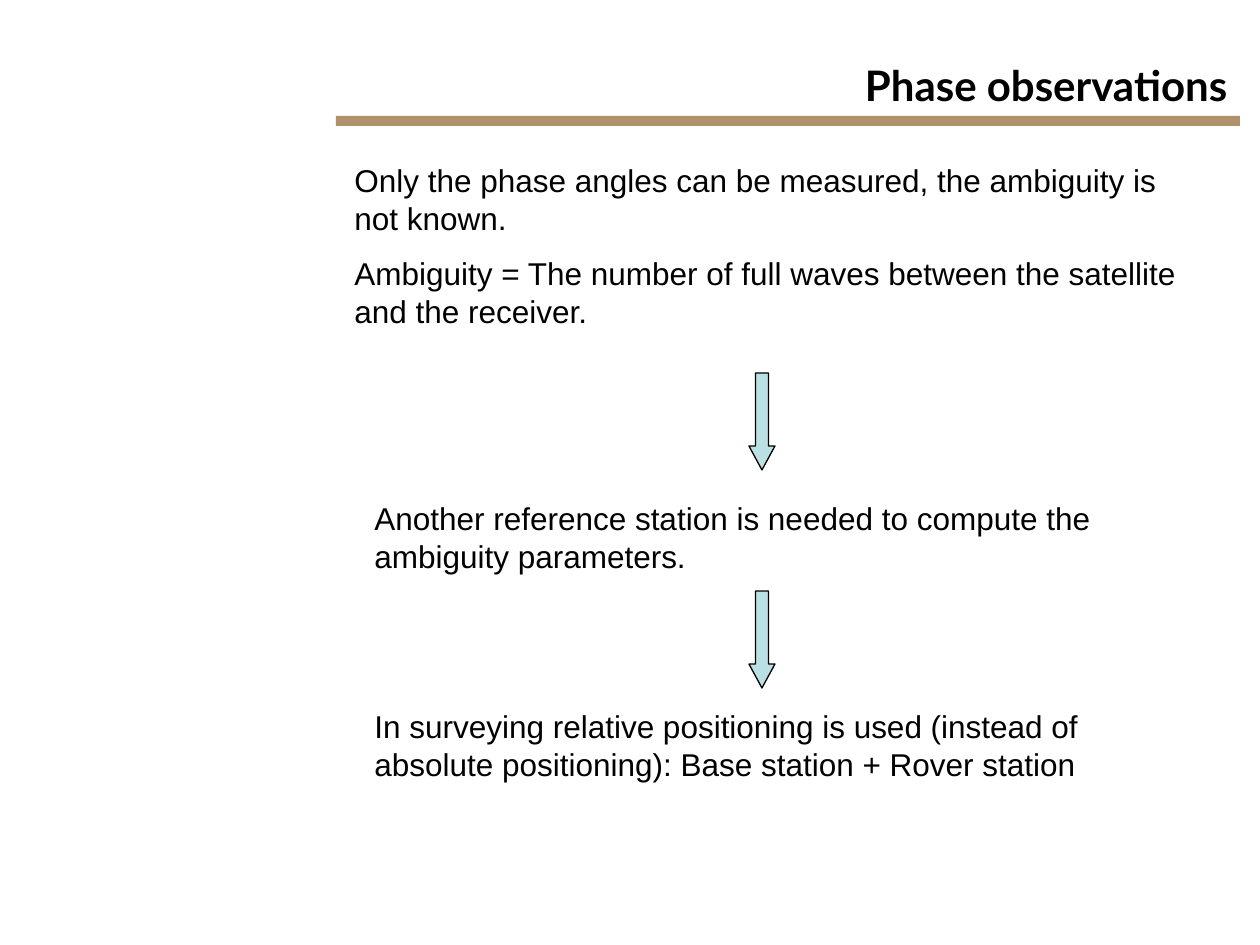
import pptx
import pptx.dml.color
import pptx.enum.shapes
import pptx.enum.text
import pptx.util
from dataclasses import dataclass

EMU_PER_PX = 914400 / 126
COLORS = {"text": "000000", "rule": "AF926B", "arrow": "BBE0E3", "outline": "000000"}


@dataclass
class Box:
    left: int
    top: int
    width: int
    height: int

    def emu(self) -> list[int]:
        return [px(n) for n in (self.left, self.top, self.width, self.height)]


@dataclass
class Statement:
    box: Box
    paragraphs: list[str]


def px(length: int) -> int:
    return round(length * EMU_PER_PX)


def rgb(name: str) -> pptx.dml.color.RGBColor:
    return pptx.dml.color.RGBColor.from_string(COLORS[name])


def style_font(font, name: str, size: int, bold: bool = False) -> None:
    font.name = name
    font.size = pptx.util.Pt(size)
    font.bold = bold
    font.color.rgb = rgb("text")


def add_statement(slide, statement: Statement) -> None:
    frame = slide.shapes.add_textbox(*statement.box.emu()).text_frame
    frame.word_wrap = True
    frame.text = "\n".join(statement.paragraphs)
    for index, paragraph in enumerate(frame.paragraphs):
        if index:
            paragraph.space_before = pptx.util.Pt(10)
        style_font(paragraph.font, "Arial", 18)


def add_filled(slide, kind, box: Box, color: str):
    shape = slide.shapes.add_shape(kind, *box.emu())
    shape.shadow.inherit = False
    shape.fill.solid()
    shape.fill.fore_color.rgb = rgb(color)
    shape.line.fill.background()
    return shape


def add_arrow(slide, top: int) -> None:
    kind = pptx.enum.shapes.MSO_SHAPE.DOWN_ARROW
    arrow = add_filled(slide, kind, Box(749, top, 26, 97), "arrow")
    arrow.adjustments[0] = 0.5
    arrow.adjustments[1] = 0.92
    arrow.line.color.rgb = rgb("outline")
    arrow.line.width = pptx.util.Pt(0.75)


def add_title(slide, text: str, box: Box) -> None:
    title = slide.shapes.title
    title.left, title.top, title.width, title.height = box.emu()
    frame = title.text_frame
    frame.text = text
    frame.word_wrap = True
    frame.auto_size = pptx.enum.text.MSO_AUTO_SIZE.NONE
    frame.vertical_anchor = pptx.enum.text.MSO_ANCHOR.TOP
    heading = frame.paragraphs[0]
    heading.alignment = pptx.enum.text.PP_ALIGN.RIGHT
    style_font(heading.font, "Lato", 24, bold=True)


STATEMENTS = [
    Statement(Box(342, 155, 873, 183), [
        "Only the phase angles can be measured, the ambiguity is not known.",
        "Ambiguity = The number of full waves between the satellite and the receiver.",
    ]),
    Statement(Box(362, 493, 855, 88), [
        "Another reference station is needed to compute the ambiguity parameters.",
    ]),
    Statement(Box(362, 701, 855, 88), [
        "In surveying relative positioning is used (instead of absolute positioning): "
        "Base station + Rover station",
    ]),
]
ARROW_TOPS = [373, 591]


def main() -> None:
    deck = pptx.Presentation()
    deck.slide_width, deck.slide_height = px(1260), px(945)
    slide = deck.slides.add_slide(deck.slide_layouts[5])

    # Heading with its rule
    add_title(slide, "Phase observations", Box(805, 53, 435, 63))
    add_filled(slide, pptx.enum.shapes.MSO_SHAPE.RECTANGLE,
               Box(336, 116, 904, 10), "rule")

    # Reasoning from top to bottom
    for statement in STATEMENTS:
        add_statement(slide, statement)
    for top in ARROW_TOPS:
        add_arrow(slide, top)

    deck.save("out.pptx")


if __name__ == "__main__":
    main()
